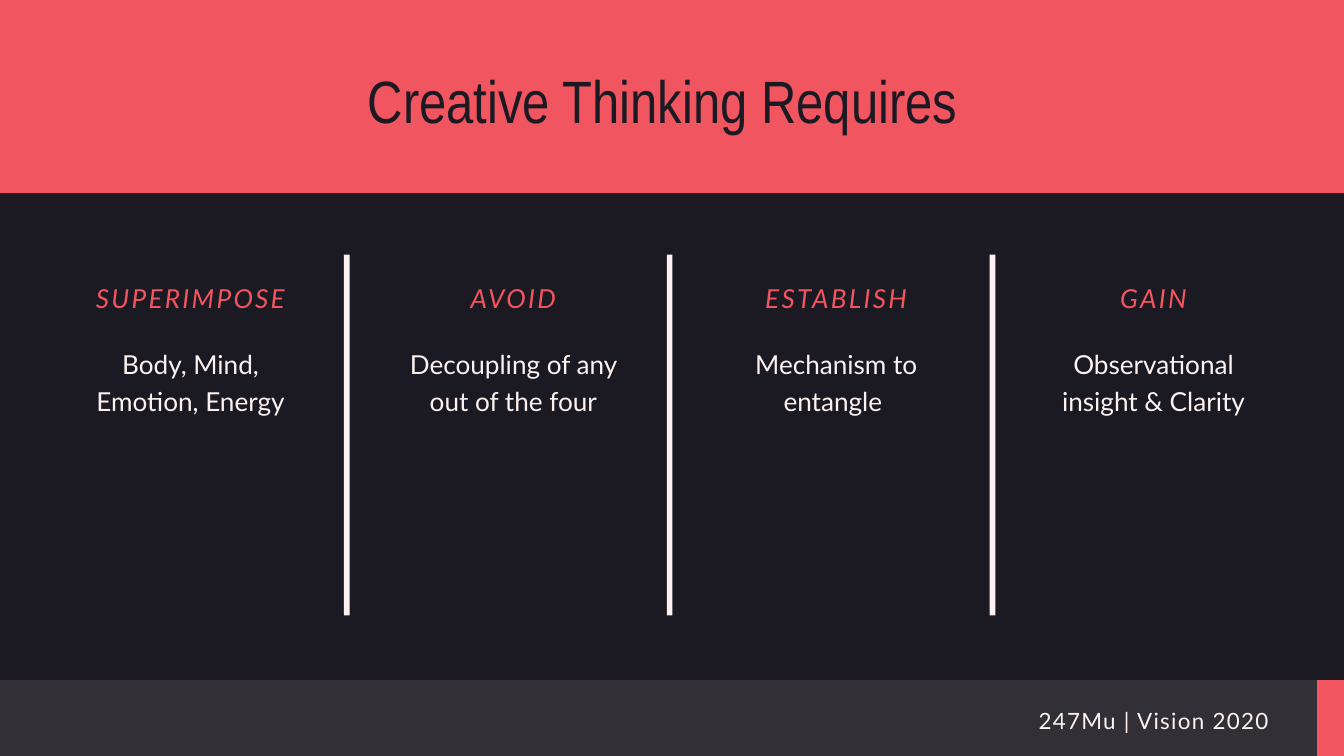
import lxml.etree
import pptx
import pptx.dml.color
import pptx.enum.shapes
import pptx.enum.text
import pptx.oxml.ns
import pptx.util

Pt = pptx.util.Pt
ALIGN = pptx.enum.text.PP_ALIGN

NIGHT, CORAL, CREAM = "1B1922", "F15560", "FDF2F1"
WIDTH, HEIGHT = 1440, 810
TITLE = "Creative Thinking Requires "
FOOTER = "247Mu | Vision 2020"
COLUMNS = [
    (80.6, "SUPERIMPOSE", "Body, Mind, Emotion, Energy"),
    (426.5, "AVOID", "Decoupling of any out of the four"),
    (772.4, "ESTABLISH", "Mechanism to entangle "),
    (1112.4, "GAIN", "Observational insight & Clarity"),
]
COLUMN_WIDTH = 247
DIVIDER_OFFSET = 288
FOOTER_TOP = 728.8
ACCENT_LEFT = 1411.2


def paint(color_owner, color):
    color_owner.solid()
    color_owner.fore_color.rgb = pptx.dml.color.RGBColor.from_string(color)


def add_block(page, left, top, width, height, color, opacity=100):
    block = page.shapes.add_shape(
        pptx.enum.shapes.MSO_SHAPE.RECTANGLE, Pt(left), Pt(top), Pt(width), Pt(height)
    )
    block.shadow.inherit = False
    block.line.fill.background()
    paint(block.fill, color)
    if opacity < 100:
        color_node = block.element.spPr.find(".//" + pptx.oxml.ns.qn("a:srgbClr"))
        alpha = lxml.etree.SubElement(color_node, pptx.oxml.ns.qn("a:alpha"))
        alpha.set("val", str(opacity * 1000))
    return block


def write(page, text, left, top, width, height, *, size, leading, color=CREAM,
          font="Lato", align=ALIGN.CENTER, italic=False, tracking=0, box=None):
    if box is None:
        box = page.shapes.add_textbox(0, 0, 0, 0)
    box.left, box.top, box.width, box.height = map(Pt, (left, top, width, height))
    frame = box.text_frame
    frame.word_wrap = True
    frame.auto_size = pptx.enum.text.MSO_AUTO_SIZE.NONE
    frame.vertical_anchor = pptx.enum.text.MSO_ANCHOR.TOP
    frame.margin_left = frame.margin_right = frame.margin_top = frame.margin_bottom = 0
    para = frame.paragraphs[0]
    para.alignment = align
    para.line_spacing = Pt(leading)
    para.space_before = Pt(0)
    span = para.add_run()
    span.text = text
    span.font.name = font
    span.font.size = Pt(size)
    span.font.italic = italic
    paint(span.font.fill, color)
    if tracking:
        span.font._element.set("spc", str(round(tracking * 100)))
    return box


def main():
    deck = pptx.Presentation()
    deck.slide_width, deck.slide_height = Pt(WIDTH), Pt(HEIGHT)
    page = deck.slides.add_slide(deck.slide_layouts.get_by_name("Title Only"))
    paint(page.background.fill, NIGHT)

    add_block(page, 0, 0, WIDTH, 207, CORAL)
    title = write(page, TITLE, 119.5, 55.4, 1195.2, 86.4, size=64, leading=89.6,
                  color=NIGHT, font="Arial Narrow", box=page.shapes.title)
    page.shapes.element.append(title.element)

    for left, heading, detail in COLUMNS:
        write(page, heading, left, 301, COLUMN_WIDTH, 34.6, size=28, leading=35,
              color=CORAL, italic=True, tracking=2.5)
        write(page, detail, left, 367.9, COLUMN_WIDTH, 76.3, size=28, leading=39.2)
    for left, _, _ in COLUMNS[:-1]:
        add_block(page, left + DIVIDER_OFFSET, 272.9, 6, 386.6, CREAM)

    footer_height = HEIGHT - FOOTER_TOP
    add_block(page, 0, FOOTER_TOP, WIDTH, footer_height, CREAM, opacity=10)
    add_block(page, ACCENT_LEFT, FOOTER_TOP, WIDTH - ACCENT_LEFT, footer_height, CORAL)
    write(page, FOOTER, 240.5, 753.1, 1118.9, 31.7, size=24, leading=33.6,
          align=ALIGN.RIGHT, tracking=1.4)

    deck.save("out.pptx")


if __name__ == "__main__":
    main()
